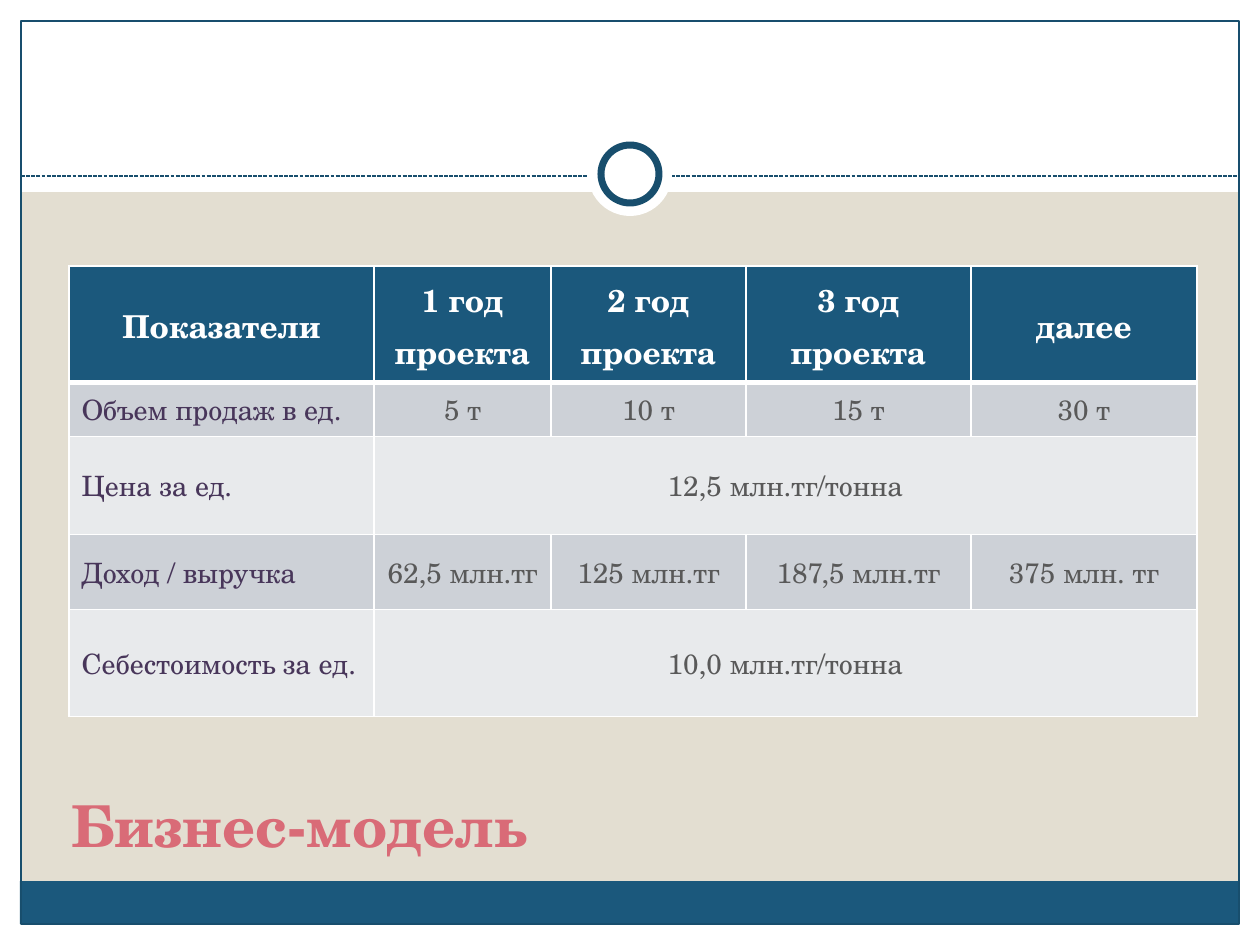
from lxml.etree import SubElement
from pptx import Presentation
from pptx.dml.color import RGBColor
from pptx.enum.dml import MSO_LINE
from pptx.enum.shapes import MSO_CONNECTOR, MSO_SHAPE
from pptx.enum.text import MSO_ANCHOR, PP_ALIGN
from pptx.oxml.ns import qn
from pptx.util import Emu, Pt

FONT = "TeX Gyre Schola"
WHITE = RGBColor(0xFF, 0xFF, 0xFF)
SAND = RGBColor(0xE3, 0xDE, 0xD1)
BLUE = RGBColor(0x1B, 0x58, 0x7C)
NAVY = RGBColor(0x18, 0x4E, 0x6D)
ROSE = RGBColor(0xD9, 0x6B, 0x77)
PLUM = RGBColor(0x48, 0x36, 0x5A)
GREY = RGBColor(0x59, 0x59, 0x59)
DARK = RGBColor(0xCD, 0xD1, 0xD7)
LIGHT = RGBColor(0xE8, 0xEA, 0xEC)

WIDE, HIGH, EDGE = 1260, 945, 21
COLS = [305, 177, 195, 225, 226]
ROWS = [92, 53, 98, 75, 107]
# A row with two entries has one value for all the years
DATA = [
    ["Показатели", "1 год проекта", "2 год проекта", "3 год проекта", "далее"],
    ["Объем продаж в ед.", "5 т", "10 т", "15 т", "30 т"],
    ["Цена за ед.", "12,5 млн.тг/тонна"],
    ["Доход / выручка", "62,5 млн.тг", "125 млн.тг", "187,5 млн.тг", "375 млн. тг"],
    ["Себестоимость за ед.", "10,0 млн.тг/тонна"],
]


def px(num):
    return Emu(round(num * 914400 / 126))


def write(frame, text, size, color, bold=False, align=PP_ALIGN.LEFT, space=None):
    para = frame.paragraphs[0]
    para.alignment = align
    para.line_spacing = space
    run = para.add_run()
    run.text = text
    font = run.font
    font.name, font.size, font.bold = FONT, Pt(size), bold
    font.color.rgb = color


def shape(slide, kind, box, fill=None, line=None, width=0.75):
    item = slide.shapes.add_shape(kind, *map(px, box))
    item.shadow.inherit = False
    if fill is None:
        item.fill.background()
    else:
        item.fill.solid()
        item.fill.fore_color.rgb = fill
    if line is None:
        item.line.fill.background()
    else:
        item.line.color.rgb = line
        item.line.width = Pt(width)


def rule(slide, left, right, top):
    line = slide.shapes.add_connector(
        MSO_CONNECTOR.STRAIGHT, px(left), px(top), px(right), px(top))
    line.line.color.rgb = NAVY
    line.line.width = Pt(0.75)
    line.line.dash_style = MSO_LINE.SQUARE_DOT
    SubElement(line._element.spPr, qn("a:effectLst"))


def border(cell, **widths):
    props = cell._tc.get_or_add_tcPr()
    for side in "LRTB":
        edge = SubElement(props, qn(f"a:ln{side}"), w=str(Pt(widths.get(side, 1))))
        fill = SubElement(edge, qn("a:solidFill"))
        SubElement(fill, qn("a:srgbClr"), val=str(WHITE))


def frame(slide):
    rect, oval = MSO_SHAPE.RECTANGLE, MSO_SHAPE.OVAL
    # White margins
    for box in [(0, HIGH - EDGE, WIDE, EDGE), (0, 0, WIDE, 192),
                (0, 0, EDGE, HIGH), (WIDE - EDGE, 0, EDGE, HIGH)]:
        shape(slide, rect, box, WHITE)
    # Bottom band, outline and dashed rule
    shape(slide, rect, (20, 881, 1218, 43), BLUE)
    shape(slide, rect, (EDGE, EDGE, WIDE - 2 * EDGE, HIGH - 2 * EDGE), line=NAVY)
    rule(slide, EDGE, WIDE - EDGE, 176)
    # Ring
    shape(slide, oval, (588, 132, 84, 84), WHITE)
    shape(slide, oval, (601, 145, 58, 58), WHITE, NAVY, 4)


def heading(slide):
    title = slide.shapes.title
    title.left, title.top, title.width, title.height = map(px, (59, 759, 1128, 106))
    title.text_frame.vertical_anchor = MSO_ANCHOR.BOTTOM
    write(title.text_frame, "Бизнес-модель", 33, ROSE, bold=True)


def table(slide):
    grid = slide.shapes.add_table(
        len(ROWS), len(COLS), px(69), px(266), px(sum(COLS)), px(sum(ROWS))).table
    grid.horz_banding = False
    for col, width in zip(grid.columns, COLS):
        col.width = px(width)
    for row, height in zip(grid.rows, ROWS):
        row.height = px(height)
    for r, texts in enumerate(DATA):
        if len(texts) == 2:
            grid.cell(r, 1).merge(grid.cell(r, len(COLS) - 1))
        for c in range(len(COLS)):
            cell = grid.cell(r, c)
            # The line under the header is thicker
            border(cell, T=3 if r == 1 else 1, B=3 if r == 0 else 1)
            cell.fill.solid()
            cell.fill.fore_color.rgb = BLUE if r == 0 else DARK if r % 2 else LIGHT
            cell.vertical_anchor = MSO_ANCHOR.MIDDLE
            if c >= len(texts):
                continue
            if r == 0:
                write(cell.text_frame, texts[c], 18, WHITE, bold=True,
                      align=PP_ALIGN.CENTER, space=1.07)
            elif c == 0:
                write(cell.text_frame, texts[c], 16, PLUM)
            else:
                write(cell.text_frame, texts[c], 16, GREY, align=PP_ALIGN.CENTER)


def main():
    deck = Presentation()
    deck.slide_width, deck.slide_height = px(WIDE), px(HIGH)
    slide = deck.slides.add_slide(deck.slide_layouts[5])
    slide.background.fill.solid()
    slide.background.fill.fore_color.rgb = SAND
    frame(slide)
    heading(slide)
    table(slide)
    deck.save("out.pptx")


if __name__ == "__main__":
    main()
